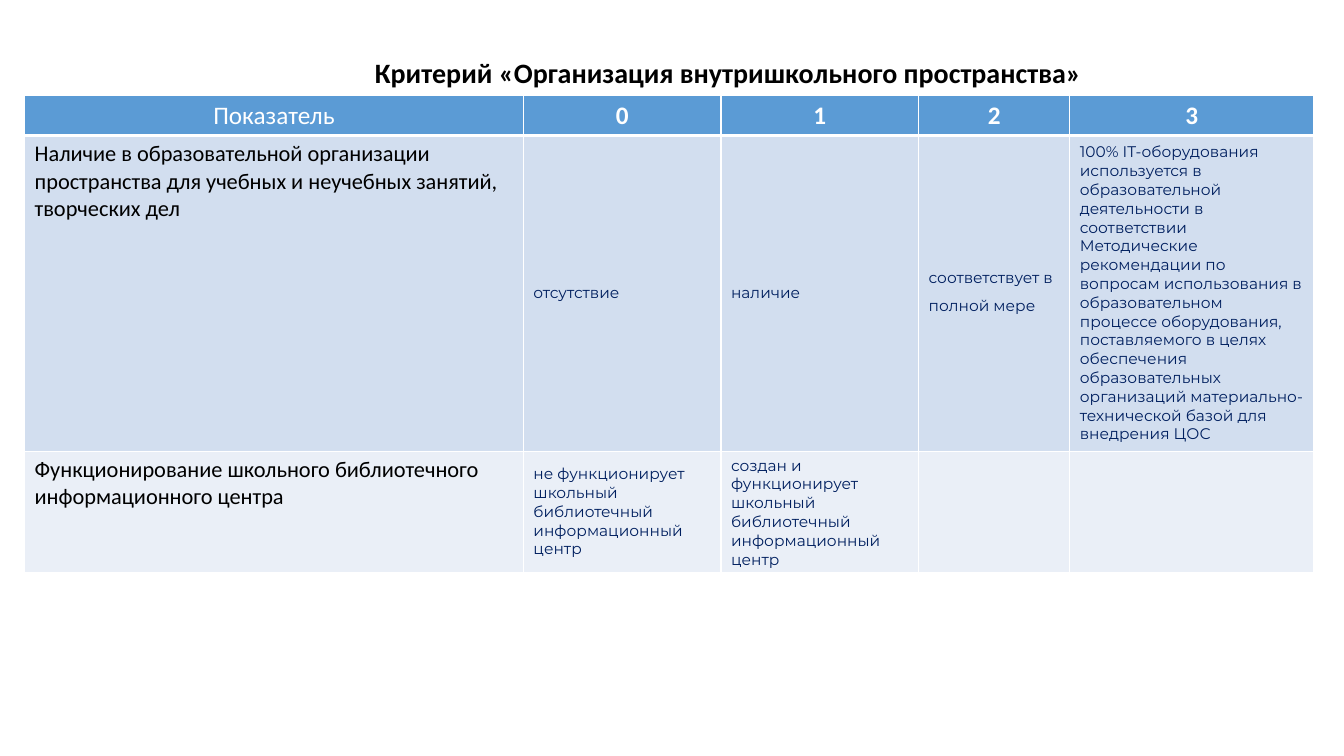
from pptx import Presentation
from pptx.dml.color import RGBColor as Rgb
from pptx.enum.text import MSO_ANCHOR as Anchor, MSO_AUTO_SIZE as Auto, PP_ALIGN as Align
from pptx.oxml import parse_xml
from pptx.oxml.ns import nsdecls
from pptx.util import Cm, Pt

TITLE = "Критерий «Организация внутришкольного пространства»"
ROWS = [
    ("Показатель", "0", "1", "2", "3"),
    ("Наличие в образовательной организации пространства для учебных и неучебных "
     "занятий, творческих дел",
     "отсутствие", "наличие", "соответствует в полной мере",
     "100% IT-оборудования используется в образовательной деятельности в соответствии "
     "Методические рекомендации по вопросам использования в образовательном процессе "
     "оборудования, поставляемого в целях обеспечения образовательных организаций "
     "материально-технической базой для внедрения ЦОС"),
    ("Функционирование школьного библиотечного информационного центра",
     "не функционирует школьный библиотечный информационный центр",
     "создан и функционирует школьный библиотечный информационный центр", "", ""),
]
WIDTHS = [12.57, 4.98, 4.98, 3.81, 6.15]
HEIGHTS = [1, 7.95, 3.05]
COLORS = {"black": "000000", "white": "FFFFFF", "navy": "001F5F",
          "head": "5B9BD5", "odd": "D2DEEF", "even": "EAEFF7"}
FILLS = ["head", "odd", "even"]
FONTS = {
    "title": {"name": "Calibri", "size": Pt(20), "bold": True, "color": "black"},
    "label": {"name": "Calibri", "size": Pt(18), "bold": False, "color": "white"},
    "score": {"name": "Calibri", "size": Pt(18), "bold": True, "color": "white"},
    "topic": {"name": "Calibri", "size": Pt(16), "bold": False, "color": "black"},
    "level": {"name": "Montserrat", "size": Pt(11), "bold": False, "color": "navy"},
}


def write(para, text, kind):
    run = para.add_run()
    run.text = text
    for key, val in FONTS[kind].items():
        if key == "color":
            run.font.color.rgb = Rgb.from_string(COLORS[val])
        else:
            setattr(run.font, key, val)


def frame(cell, row):
    props = cell._tc.get_or_add_tcPr()
    for side in "LRTB":
        thick = (row, side) in ((0, "B"), (1, "T"))
        props.append(parse_xml(
            f'<a:ln{side} {nsdecls("a")} w="{Pt(3 if thick else 1)}"><a:solidFill>'
            f'<a:srgbClr val="{COLORS["white"]}"/></a:solidFill></a:ln{side}>'))


def style(row, col):
    if row == 0:
        return "score" if col else "label"
    return "level" if col else "topic"


def main():
    """Build the slide with the school space criterion table."""
    deck = Presentation()
    deck.slide_width, deck.slide_height = Cm(33.87), Cm(19.05)
    slide = deck.slides.add_slide(deck.slide_layouts[6])

    head = slide.shapes.add_textbox(Cm(9.2), Cm(1.27), Cm(18.44), Cm(1.11)).text_frame
    head.word_wrap = False
    head.auto_size = Auto.SHAPE_TO_FIT_TEXT
    write(head.paragraphs[0], TITLE, "title")

    table = slide.shapes.add_table(len(ROWS), len(WIDTHS), Cm(0.62), Cm(2.4),
                                   Cm(sum(WIDTHS)), Cm(sum(HEIGHTS))).table
    for col, width in zip(table.columns, WIDTHS):
        col.width = Cm(width)
    for row, height in zip(table.rows, HEIGHTS):
        row.height = Cm(height)

    for r, texts in enumerate(ROWS):
        for c, text in enumerate(texts):
            cell = table.cell(r, c)
            frame(cell, r)
            cell.fill.solid()
            cell.fill.fore_color.rgb = Rgb.from_string(COLORS[FILLS[r]])
            kind = style(r, c)
            cell.vertical_anchor = Anchor.TOP if kind == "topic" else Anchor.MIDDLE
            para = cell.text_frame.paragraphs[0]
            para.alignment = Align.LEFT if r else Align.CENTER
            if text:
                write(para, text, kind)

    full = table.cell(1, 3)
    full.margin_bottom = Cm(0.43)
    full.text_frame.paragraphs[0].line_spacing = Pt(20)
    deck.save("out.pptx")


if __name__ == "__main__":
    main()
